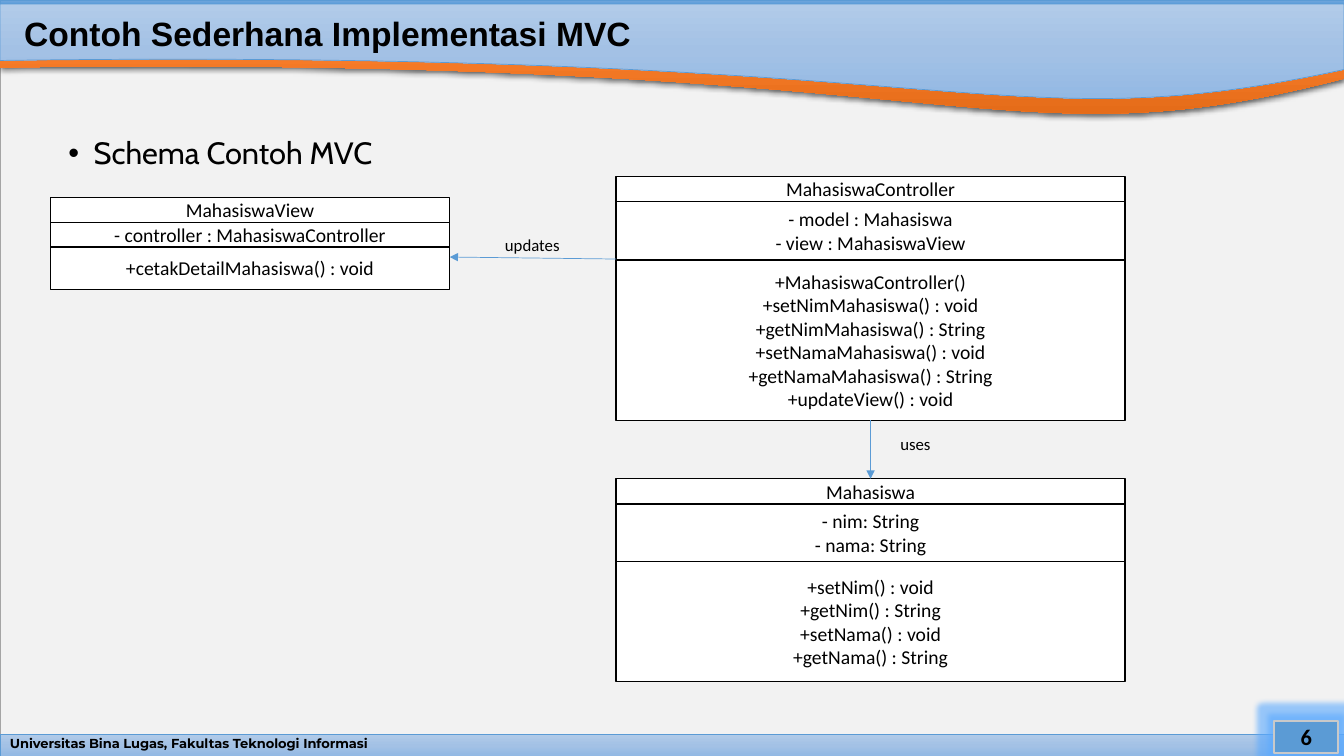
from dataclasses import dataclass

from lxml.etree import SubElement
from pptx import Presentation
from pptx.dml.color import RGBColor as Rgb
from pptx.enum.shapes import MSO_CONNECTOR as Link, MSO_SHAPE as Preset
from pptx.enum.text import MSO_ANCHOR as Anchor, PP_ALIGN as Align
from pptx.oxml.ns import qn
from pptx.util import Inches, Pt

COLORS = {
    "paper": "F2F2F2", "edge": "A5A5A5", "blue": "5B9BD5", "silver": "C9C9C9",
    "ink": "000000", "white": "FFFFFF", "glow": "5BAAFF",
}
GRADIENTS = {
    "orange": ("F18C57", "F67B28", "E56C19"),
    "sky": ("B1CBE9", "A3C1E5", "93B9E4"),
    "deep": ("71A6DB", "559BDB", "448ACA"),
}
WIDTH, HEIGHT = 13.33, 7.5


@dataclass
class Style:
    size: float
    font: str = "Calibri"
    bold: bool = False
    align: Align = Align.LEFT
    anchor: Anchor = Anchor.MIDDLE
    spacing: float = 1.0


@dataclass
class Wave:
    top: float
    height: float
    left_end: float
    controls: tuple
    right_end: float
    gradient: str


@dataclass
class UmlClass:
    left: float
    top: float
    width: float
    sections: list  # (height, lines) for name, attributes, methods


MEMBER = Style(14, align=Align.CENTER)
ARROW_LABEL = Style(12, align=Align.CENTER)

ORANGE_WAVE = Wave(0.01, 1.11, 0.67, ((9.76, 0.53), (9.86, 1.68)), 0.78, "orange")
SKY_WAVE = Wave(0.04, 0.94, 0.6, ((9.76, 0.47), (9.86, 1.44)), 0.69, "sky")

VIEW = UmlClass(0.5, 1.96, 3.96, [
    (0.25, ["MahasiswaView"]),
    (0.24, ["- controller : MahasiswaController"]),
    (0.42, ["+cetakDetailMahasiswa() : void"]),
])
CONTROLLER = UmlClass(6.11, 1.75, 5.05, [
    (0.25, ["MahasiswaController"]),
    (0.58, ["- model : Mahasiswa", "- view : MahasiswaView"]),
    (1.59, ["+MahasiswaController()", "+setNimMahasiswa() : void",
            "+getNimMahasiswa() : String", "+setNamaMahasiswa() : void",
            "+getNamaMahasiswa() : String", "+updateView() : void"]),
])
MODEL = UmlClass(6.11, 4.75, 5.05, [
    (0.25, ["Mahasiswa"]),
    (0.57, ["- nim: String", "- nama: String"]),
    (1.19, ["+setNim() : void", "+getNim() : String",
            "+setNama() : void", "+getNama() : String"]),
])

deck = Presentation()
deck.slide_width, deck.slide_height = Inches(WIDTH), Inches(HEIGHT)
slide = deck.slides.add_slide(deck.slide_layouts[6])
shapes = slide.shapes


def color(name: str) -> Rgb:
    return Rgb.from_string(COLORS[name])


def paint(shape, fill: str, line: str | None = None, weight: float = 0.5) -> None:
    shape.shadow.inherit = False
    if fill in GRADIENTS:
        shape.fill.gradient()
        shape.fill.gradient_angle = 270
        stops = shape._element.spPr.find(qn("a:gradFill")).find(qn("a:gsLst"))
        for stop in list(stops):
            stops.remove(stop)
        for index, value in enumerate(GRADIENTS[fill]):
            stop = SubElement(stops, qn("a:gs"), pos=str(index * 50000))
            SubElement(stop, qn("a:srgbClr"), val=value)
    else:
        shape.fill.solid()
        shape.fill.fore_color.rgb = color(fill)
    if line:
        shape.line.color.rgb = color(line)
        shape.line.width = Pt(weight)
    else:
        shape.line.fill.background()


def add_effect(shape, tag: str, tint: str, alpha: int, **settings: str) -> None:
    effects = shape._element.spPr.find(qn("a:effectLst"))
    effect = SubElement(effects, qn(tag), **settings)
    tone = SubElement(effect, qn("a:srgbClr"), val=COLORS[tint])
    SubElement(tone, qn("a:alpha"), val=str(alpha * 1000))


def write(shape, lines: list[str], style: Style) -> None:
    frame = shape.text_frame
    frame.word_wrap = True
    frame.vertical_anchor = style.anchor
    for index, line in enumerate(lines):
        paragraph = frame.add_paragraph() if index else frame.paragraphs[0]
        paragraph.alignment = style.align
        paragraph.line_spacing = style.spacing
        run = paragraph.add_run()
        run.text = line
        run.font.size = Pt(style.size)
        run.font.name = style.font
        run.font.bold = style.bold
        run.font.color.rgb = color("ink")


def add_box(left: float, top: float, width: float, height: float,
            fill: str, line: str, weight: float = 0.5):
    box = shapes.add_shape(Preset.RECTANGLE, *map(Inches, (left, top, width, height)))
    paint(box, fill, line, weight)
    return box


def add_text(left: float, top: float, width: float, height: float,
             text: str, style: Style):
    box = shapes.add_textbox(*map(Inches, (left, top, width, height)))
    write(box, [text], style)
    return box


def add_wave(wave: Wave, line: str | None = None):
    corners = [(0, wave.top), (0, wave.left_end), (WIDTH, wave.right_end)]
    builder = shapes.build_freeform(Inches(WIDTH), Inches(wave.top))
    builder.add_line_segments([(Inches(x), Inches(y)) for x, y in corners], close=True)
    shape = builder.convert_to_shape()
    # Bend the lower edge into one cubic curve
    outline = next(shape._element.iter(qn("a:path")))
    shape.height = Inches(wave.height)
    outline.set("h", str(Inches(wave.height)))
    lower_edge = outline.findall(qn("a:lnTo"))[2]
    lower_edge.tag = qn("a:cubicBezTo")
    for index, (x, y) in enumerate(wave.controls):
        point = SubElement(lower_edge, qn("a:pt"),
                           x=str(Inches(x)), y=str(Inches(y - wave.top)))
        lower_edge.insert(index, point)
    paint(shape, wave.gradient, line)
    return shape


def add_class(uml: UmlClass) -> list:
    parts, top = [], uml.top
    for height, lines in uml.sections:
        part = add_box(uml.left, top, uml.width, height, "white", "ink", 1)
        write(part, lines, MEMBER)
        parts.append(part)
        top += height
    return parts


def add_arrow(start: tuple[float, float], end: tuple[float, float]):
    arrow = shapes.add_connector(Link.STRAIGHT, *map(Inches, (*start, *end)))
    arrow.line.color.rgb = color("blue")
    arrow.line.width = Pt(0.5)
    SubElement(arrow.line._get_or_add_ln(), qn("a:tailEnd"), type="triangle")
    SubElement(arrow._element.spPr, qn("a:effectLst"))
    return arrow


# Background, header waves and footer bar
add_box(0, 0.04, WIDTH, 7.46, "paper", "edge")
add_effect(add_wave(ORANGE_WAVE), "a:outerShdw", "ink", 63,
           blurRad="57150", dist="19050", dir="5400000", rotWithShape="0")
add_box(0, 7.29, WIDTH, 0.21, "sky", "blue")
add_box(0, 0, WIDTH, 0.11, "deep", "blue")
add_wave(SKY_WAVE, "blue")

# Footer text and page number
add_text(0, 7.29, WIDTH, 0.21, "Universitas Bina Lugas, Fakultas Teknologi Informasi",
         Style(9.3, "Montserrat", bold=True, spacing=0.7))
page_number = add_box(12.64, 7.15, 0.63, 0.32, "blue", "silver", 1.5)
add_effect(page_number, "a:glow", "glow", 60, rad=str(Inches(0.11)))
write(page_number, ["6"], Style(16, bold=True, align=Align.CENTER))

# Bullet and title
topic = add_text(0.58, 1.32, 12.25, 5.82, "Schema Contoh MVC",
                 Style(22, "Cabin", anchor=Anchor.TOP, spacing=0.9))
topic_line = topic.text_frame.paragraphs[0]
topic_line.space_before = Pt(10)
bullet = topic_line._p.get_or_add_pPr()
bullet.set("marL", str(Inches(0.25)))
bullet.set("indent", str(Inches(-0.25)))
SubElement(bullet, qn("a:buFont"), typeface="Arial")
SubElement(bullet, qn("a:buChar"), char="•")
add_text(0.14, 0.12, 12.98, 0.46, "Contoh Sederhana Implementasi MVC",
         Style(24, "Arial", bold=True, spacing=0.9))

# Class diagram
add_class(VIEW)
controller_parts = add_class(CONTROLLER)
model_parts = add_class(MODEL)

# Relations
add_arrow((6.11, 2.57), (4.46, 2.55))
uses = add_arrow((8.64, 4.17), (8.64, 4.75))
uses.begin_connect(controller_parts[-1], 2)
uses.end_connect(model_parts[0], 0)
add_text(4.66, 2.35, 1.24, 0.16, "updates", ARROW_LABEL)
add_text(8.46, 4.32, 1.24, 0.16, "uses", ARROW_LABEL)

deck.save("out.pptx")
